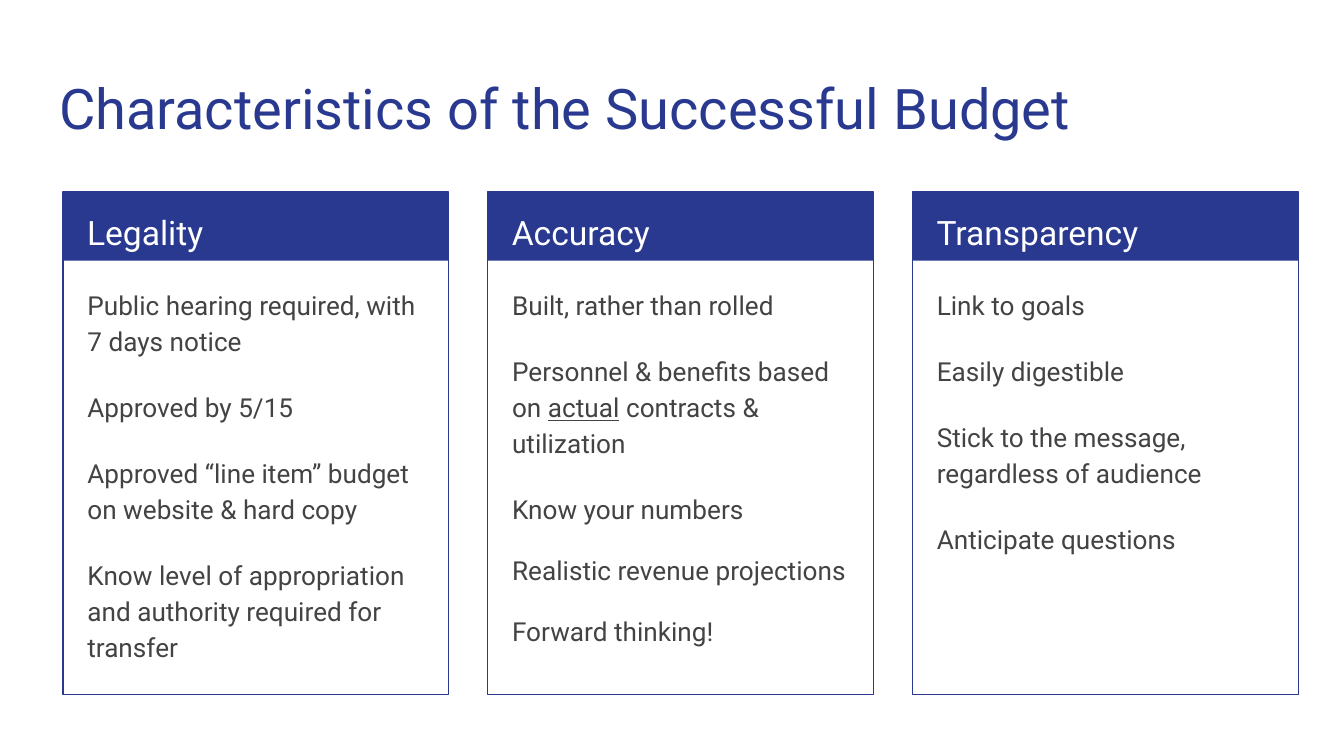
from lxml import etree
from pptx import Presentation
from pptx.dml.color import RGBColor
from pptx.enum.shapes import MSO_SHAPE
from pptx.enum.text import MSO_ANCHOR, MSO_AUTO_SIZE, PP_ALIGN
from pptx.oxml.ns import qn
from pptx.util import Inches, Pt

RECTANGLE = MSO_SHAPE.RECTANGLE
TOP = MSO_ANCHOR.TOP
NO_AUTOFIT = MSO_AUTO_SIZE.NONE
LEFT = PP_ALIGN.LEFT

FONT = "Roboto"
BLUE, GRAY, WHITE = "2A3990", "434343", "FFFFFF"
COMPARISON_LAYOUT = 4
CARD_LEFT, CARD_TOP, CARD_WIDTH, CARD_HEIGHT = 0.47, 1.43, 2.87, 3.74
CARD_STEP = 3.16
HEADER_HEIGHT = 0.51

CARDS = [
    ("Legality", [
        ("Public hearing required, with 7 days notice", 1.15),
        ("Approved by 5/15", 1.15),
        ("Approved “line item” budget on website & hard copy", 1.15),
        ("Know level of appropriation and authority required for transfer", 1.15),
    ]),
    ("Accuracy", [
        ("Built, rather than rolled", 1.15),
        ("Personnel & benefits based on _actual_ contracts & utilization", 1.15),
        ("Know your numbers", 1.15),
        ("Realistic revenue projections", 1.0),
        ("Forward thinking!", 1.0),
    ]),
    ("Transparency", [
        ("Link to goals", 1.15),
        ("Easily digestible", 1.15),
        ("Stick to the message, regardless of audience", 1.15),
        ("Anticipate questions", 1.15),
    ]),
]


def color(hex_string):
    """Return the colour for a hex string."""
    return RGBColor.from_string(hex_string)


def place(shape, left, top, width, height):
    """Set the box of a shape, in inches."""
    shape.left, shape.top = Inches(left), Inches(top)
    shape.width, shape.height = Inches(width), Inches(height)


def prepare_frame(frame):
    """Make a text frame wrap from the top with even margins."""
    frame.word_wrap = True
    frame.auto_size = NO_AUTOFIT
    frame.vertical_anchor = TOP
    frame.margin_left = frame.margin_right = Inches(0.1)
    frame.margin_top = frame.margin_bottom = Inches(0.1)


def format_paragraph(paragraph, size, hex_string, line_spacing=1.0, space_after=0):
    """Set the font and spacing of a left-aligned paragraph."""
    paragraph.alignment = LEFT
    paragraph.line_spacing = line_spacing
    paragraph.space_before = Pt(0)
    paragraph.space_after = Pt(space_after)
    font = paragraph.font
    font.name, font.size, font.bold = FONT, Pt(size), False
    font.color.rgb = color(hex_string)


def remove_bullet(paragraph):
    """Take the bullet and hanging indent off a paragraph."""
    properties = paragraph._p.get_or_add_pPr()
    properties.set("marL", "0")
    properties.set("indent", "0")
    bullet = etree.Element(qn("a:buNone"))
    properties.find(qn("a:defRPr")).addprevious(bullet)


def fill_line(shape, text, size, hex_string, line_spacing=1.0):
    """Write a single line of text in a title or heading."""
    prepare_frame(shape.text_frame)
    shape.text_frame.text = text
    format_paragraph(shape.text_frame.paragraphs[0], size, hex_string, line_spacing)


def fill_list(body, items, left, top, width, height):
    """Write list items in a body placeholder, underlining words between underscores."""
    place(body, left, top, width, height)
    frame = body.text_frame
    prepare_frame(frame)
    for index, (text, line_spacing) in enumerate(items):
        paragraph = frame.add_paragraph() if index else frame.paragraphs[0]
        for position, part in enumerate(text.split("_")):
            run = paragraph.add_run()
            run.text = part
            if position % 2:
                run.font.underline = True
        format_paragraph(paragraph, 14, GRAY, line_spacing, 16)
        remove_bullet(paragraph)


def add_card(slide, body, heading, items, left, top, width, height):
    """Draw a framed card with a heading band and its list."""
    group = slide.shapes.add_group_shape()
    header, frame = [
        group.shapes.add_shape(RECTANGLE, Inches(left), Inches(top),
                               Inches(width), Inches(part_height))
        for part_height in (HEADER_HEIGHT, height)
    ]
    header.shadow.inherit = frame.shadow.inherit = False
    header.fill.solid()
    header.fill.fore_color.rgb = color(BLUE)
    header.line.fill.background()
    frame.fill.background()
    frame.line.color.rgb = color(BLUE)
    frame.line.width = Pt(0.75)

    label = slide.shapes.add_textbox(Inches(left + 0.08), Inches(top),
                                     Inches(width - 0.14), Inches(0.5))
    fill_line(label, heading, 18, WHITE, 1.15)
    fill_list(body, items, left + 0.08, top + 0.59, width - 0.16, height - 0.68)


def main():
    """Build and save the presentation."""
    presentation = Presentation()
    presentation.slide_width = Inches(10)
    presentation.slide_height = Inches(10 * 9 / 16)
    layout = presentation.slide_layouts[COMPARISON_LAYOUT]
    slide = presentation.slides.add_slide(layout)
    title = slide.shapes.title
    place(title, 0.34, 0.45, 9.32, 0.66)
    fill_line(title, "Characteristics of the Successful Budget", 30, BLUE)
    bodies = list(slide.placeholders)[1:]
    for index, (heading, items) in enumerate(CARDS):
        add_card(slide, bodies[index], heading, items,
                 CARD_LEFT + index * CARD_STEP, CARD_TOP, CARD_WIDTH, CARD_HEIGHT)
    for spare in bodies[len(CARDS):]:
        spare.element.getparent().remove(spare.element)
    presentation.save("out.pptx")


if __name__ == "__main__":
    main()
